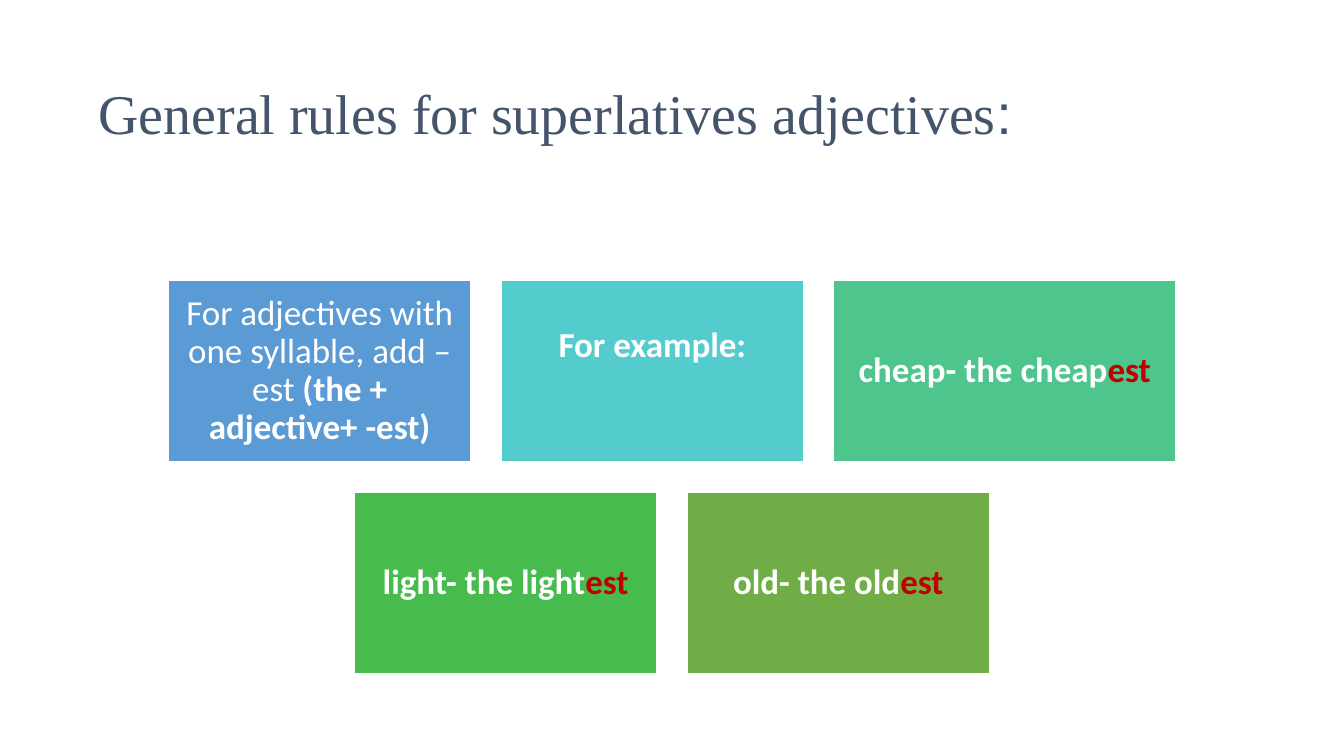
from pptx import Presentation as Deck
from pptx.dml.color import RGBColor as Color
from pptx.enum.shapes import MSO_SHAPE as Shape
from pptx.enum.text import MSO_ANCHOR as Anchor, PP_ALIGN as Align
from pptx.util import Inches, Pt

COLORS = {
    "title": "44546A", "white": "FFFFFF", "ending": "C00000",
    "blue": "5B9BD5", "aqua": "54CCCD", "mint": "4DC58D",
    "green": "48BB4F", "olive": "70AD47",
}
UNIT = 0.3  # inches per grid column and per grid row
SLIDE_COLUMNS, SLIDE_ROWS = 44.44, 25
CARD_WIDTH, WIDE_CARD, CARD_HEIGHT, GAP = 10, 11.3, 6, 1
FIRST_ROW = 9.27


def grid(units):
    return Inches(units * UNIT)


class SlideBuilder:
    """Holds the text style and the current slide."""

    def __init__(self, page):
        self.page = page
        self.font = "Calibri"
        self.size = 25
        self.inset = Inches(0.1)

    def fill_text(self, frame, spans, size, align):
        """Each span is (text, font, colour, bold)."""
        frame.word_wrap = True
        frame.vertical_anchor = Anchor.MIDDLE
        para = frame.paragraphs[0]
        para.alignment = align
        para.line_spacing = 0.9
        for text, font, color, bold in spans:
            span = para.add_run()
            span.text = text
            span.font.name = font
            span.font.size = Pt(size)
            span.font.bold = bold
            span.font.color.rgb = Color.from_string(COLORS[color])

    def title(self, spans):
        box = self.page.shapes.add_textbox(*map(grid, (2.93, 1.67, 38.57, 4.33)))
        self.fill_text(box.text_frame, spans, 40, Align.LEFT)

    def card(self, column, row, width, fill, spans, lift):
        box = self.page.shapes.add_shape(
            Shape.RECTANGLE, *map(grid, (column, row, width, CARD_HEIGHT)))
        box.shadow.inherit = False
        box.fill.solid()
        box.fill.fore_color.rgb = Color.from_string(COLORS[fill])
        box.line.color.rgb = Color.from_string(COLORS["white"])
        box.line.width = Pt(1)
        frame = box.text_frame
        frame.margin_left = frame.margin_right = frame.margin_top = self.inset
        frame.margin_bottom = self.inset + grid(lift)
        styled = [(text, self.font, color, bold) for text, color, bold in spans]
        self.fill_text(frame, styled, self.size, Align.CENTER)

    def card_row(self, row, cards):
        """Centre a row of cards on the slide."""
        total = sum(card[0] for card in cards) + GAP * (len(cards) - 1)
        column = (SLIDE_COLUMNS - total) / 2
        for width, fill, spans, lift in cards:
            self.card(column, row, width, fill, spans, lift)
            column += width + GAP


def superlative(stem):
    return [(f"{stem}- the {stem}", "white", True), ("est", "ending", True)]


def main():
    deck = Deck()
    deck.slide_width, deck.slide_height = grid(SLIDE_COLUMNS), grid(SLIDE_ROWS)
    builder = SlideBuilder(deck.slides.add_slide(deck.slide_layouts[6]))

    # Title
    builder.title([
        ("General rules for superlatives adjectives", "Times New Roman", "title", False),
        (":", "Arial", "title", False),
    ])

    # Rule and examples
    rule = [("For adjectives with one syllable, add –est ", "white", False),
            ("(the + adjective+ -est)", "white", True)]
    builder.card_row(FIRST_ROW, [
        (CARD_WIDTH, "blue", rule, 0),
        (CARD_WIDTH, "aqua", [("For example:", "white", True)], 1.67),
        (WIDE_CARD, "mint", superlative("cheap"), 0),
    ])
    builder.card_row(FIRST_ROW + CARD_HEIGHT + GAP, [
        (CARD_WIDTH, "green", superlative("light"), 0),
        (CARD_WIDTH, "olive", superlative("old"), 0),
    ])

    deck.save("out.pptx")


if __name__ == "__main__":
    main()
